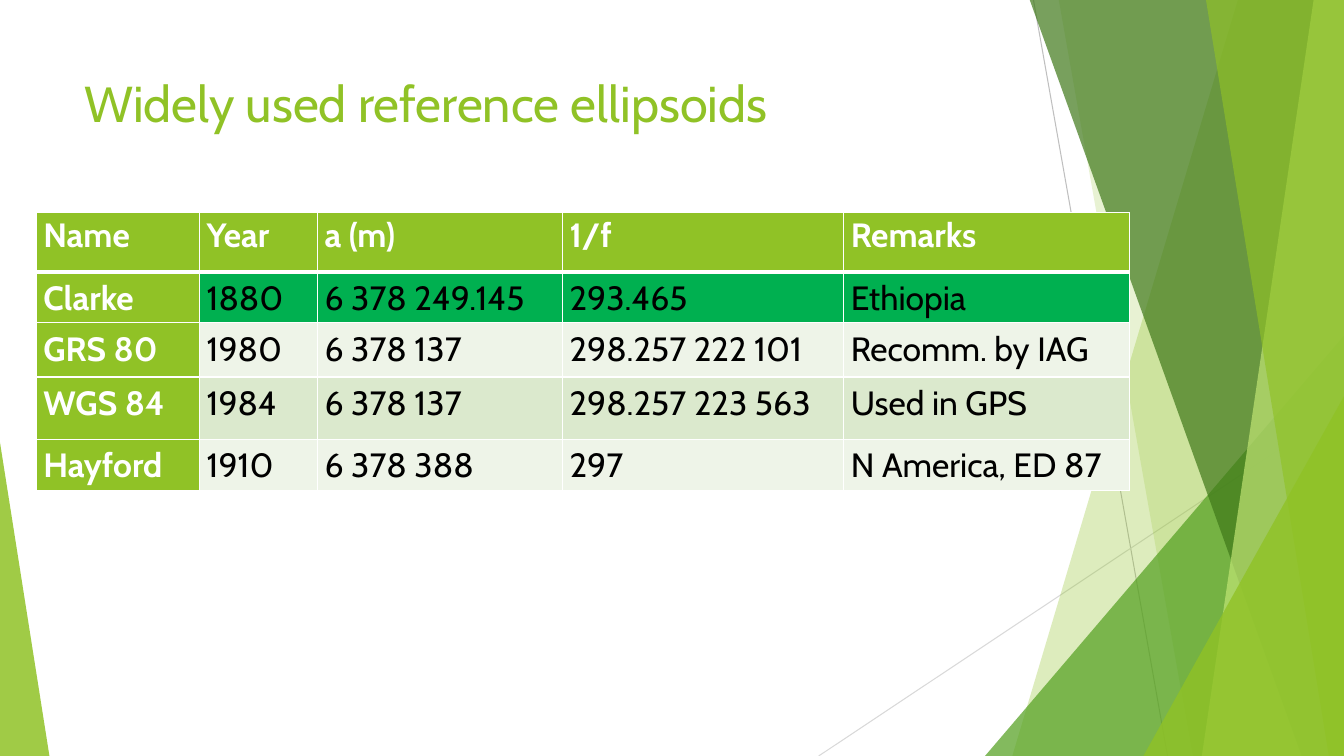
import pptx
import pptx.util
import pptx.dml.color
import pptx.enum.shapes
import pptx.enum.text
import pptx.oxml
import pptx.oxml.ns

Inches = pptx.util.Inches
Pt = pptx.util.Pt
SHAPE = pptx.enum.shapes.MSO_SHAPE
FONT = "Cabin"
COLORS = {
    "lime": "90C226", "leaf": "54A021", "forest": "3F7819", "pale": "C0E474",
    "emerald": "00B050", "light": "EEF4E8", "tint": "DBE9CD",
    "white": "FFFFFF", "black": "000000", "grey": "BFBFBF", "silver": "D9D9D9",
}
ROWS = [
    ("Name", "Year", "a (m)", "1/f", "Remarks"),
    ("Clarke", "1880", "6 378 249.145", "293.465", "Ethiopia"),
    ("GRS 80", "1980", "6 378 137", "298.257 222 101", "Recomm. by IAG"),
    ("WGS 84", "1984", "6 378 137", "298.257 223 563", "Used in GPS"),
    ("Hayford", "1910", "6 378 388", "297", "N America, ED 87"),
]
ROW_FILLS = ["lime", "emerald", "light", "tint", "light"]
COL_WIDTHS = [1.62, 1.17, 2.43, 2.79, 2.83]
ROW_HEIGHTS = [0.59, 0.5, 0.54, 0.62, 0.51]


def rgb(name):
    """Return the named colour."""
    return pptx.dml.color.RGBColor.from_string(COLORS[name])


def add_text(tf, text, size=24, color="black", bold=False, spacing=1.0):
    """Write one formatted paragraph into a text frame."""
    p = tf.paragraphs[0]
    p.line_spacing = spacing
    r = p.add_run()
    r.text = text
    r.font.name = FONT
    r.font.size = Pt(size)
    r.font.bold = bold
    r.font.color.rgb = rgb(color)


def paint(sp, color, opacity):
    """Give a shape a translucent fill without line or shadow."""
    sp.shadow.inherit = False
    sp.line.fill.background()
    sp.fill.solid()
    sp.fill.fore_color.rgb = rgb(color)
    clr = sp._element.spPr.find(".//" + pptx.oxml.ns.qn("a:srgbClr"))
    alpha = clr.makeelement(pptx.oxml.ns.qn("a:alpha"), {"val": str(opacity * 1000)})
    clr.append(alpha)


def add_ray(s, x1, y1, x2, y2, color):
    """Draw a thin straight line."""
    ray = s.shapes.add_connector(
        pptx.enum.shapes.MSO_CONNECTOR.STRAIGHT,
        Inches(x1), Inches(y1), Inches(x2), Inches(y2))
    ray.line.color.rgb = rgb(color)
    ray.line.width = Pt(0.75)
    spPr = ray._element.spPr
    spPr.append(spPr.makeelement(pptx.oxml.ns.qn("a:effectLst"), {}))


def add_facet(s, right, top, bottom, top_width, bottom_width, color, opacity):
    """Draw a four-sided facet against the right edge."""
    corners = [(right - top_width, top), (right, top),
               (right, bottom), (right - bottom_width, bottom)]
    points = [(Inches(x), Inches(y)) for x, y in corners]
    builder = s.shapes.build_freeform(*points[0])
    builder.add_line_segments(points[1:], close=True)
    paint(builder.convert_to_shape(), color, opacity)


def add_wedge(s, left, bottom, width, height, apex, color, opacity):
    """Draw a right triangle standing on the bottom edge."""
    sp = s.shapes.add_shape(SHAPE.ISOSCELES_TRIANGLE, Inches(left),
                            Inches(bottom - height), Inches(width), Inches(height))
    sp.adjustments[0] = apex
    paint(sp, color, opacity)


def add_backdrop(s, left, top, width, height):
    """Layer the rays, facets and wedges along the slide's sides."""
    right, bottom = left + width, top + height
    add_ray(s, right - 3.08, top, right - 1.75, bottom, "grey")
    add_ray(s, right, top + 4.03, right - 5.21, bottom, "silver")
    edge = (s, right, top - 0.01, bottom)
    add_facet(*edge, 1.05, 3.29, "lime", 30)
    add_facet(*edge, 2.83, 1.5, "lime", 20)
    add_wedge(s, right - 3.56, bottom, 3.56, 4.17, 1, "leaf", 72)
    add_facet(*edge, 3.12, 0.42, "forest", 70)
    add_facet(*edge, 0.3, 1.41, "pale", 70)
    add_facet(*edge, 1.37, 0.15, "lime", 65)
    add_wedge(s, right - 1.99, bottom, 1.99, 3.57, 1, "lime", 80)
    add_wedge(s, left, bottom, 0.49, 3.11, 0, "lime", 85)


def add_title(s, left, top, width, height):
    """Place the slide title."""
    box = s.shapes.add_textbox(Inches(left), Inches(top), Inches(width), Inches(height))
    tf = box.text_frame
    tf.word_wrap = True
    tf.vertical_anchor = pptx.enum.text.MSO_ANCHOR.TOP
    add_text(tf, "Widely used reference ellipsoids", size=36, color="lime")


def add_borders(cell, top, bottom):
    """Give a cell white borders of the stated top and bottom widths."""
    tcPr = cell._tc.get_or_add_tcPr()
    for tag, width in (("lnL", 1), ("lnR", 1), ("lnT", top), ("lnB", bottom)):
        tcPr.append(pptx.oxml.parse_xml(
            f'<a:{tag} {pptx.oxml.ns.nsdecls("a")} w="{Pt(width)}"><a:solidFill>'
            f'<a:srgbClr val="{COLORS["white"]}"/></a:solidFill></a:{tag}>'))


def add_ellipsoid_table(s, left, top, width, height):
    """Build the table of ellipsoids."""
    table = s.shapes.add_table(len(ROWS), len(COL_WIDTHS), Inches(left), Inches(top),
                               Inches(width), Inches(height)).table
    for column, col_width in zip(table.columns, COL_WIDTHS):
        column.width = Inches(col_width)
    for i, values in enumerate(ROWS):
        table.rows[i].height = Inches(ROW_HEIGHTS[i])
        for j, value in enumerate(values):
            cell = table.cell(i, j)
            heading = i == 0 or j == 0
            cell.margin_left = cell.margin_right = Inches(0.07)
            cell.margin_top = cell.margin_bottom = 0
            add_borders(cell, 3 if i == 1 else 1, 3 if i == 0 else 1)
            cell.fill.solid()
            cell.fill.fore_color.rgb = rgb("lime" if heading else ROW_FILLS[i])
            add_text(cell.text_frame, value, color="white" if heading else "black",
                     bold=heading, spacing=1.07 if i == 0 else 1.15)


def main():
    """Build and save the slide."""
    prs = pptx.Presentation()
    prs.slide_width, prs.slide_height = Inches(13.33), Inches(7.5)
    s = prs.slides.add_slide(prs.slide_layouts[6])
    add_backdrop(s, 0, 0, 13.33, 7.5)
    add_title(s, 0.74, 0.67, 9.4, 1.44)
    add_ellipsoid_table(s, 0.36, 2.11, sum(COL_WIDTHS), sum(ROW_HEIGHTS))
    prs.save("out.pptx")


if __name__ == "__main__":
    main()
